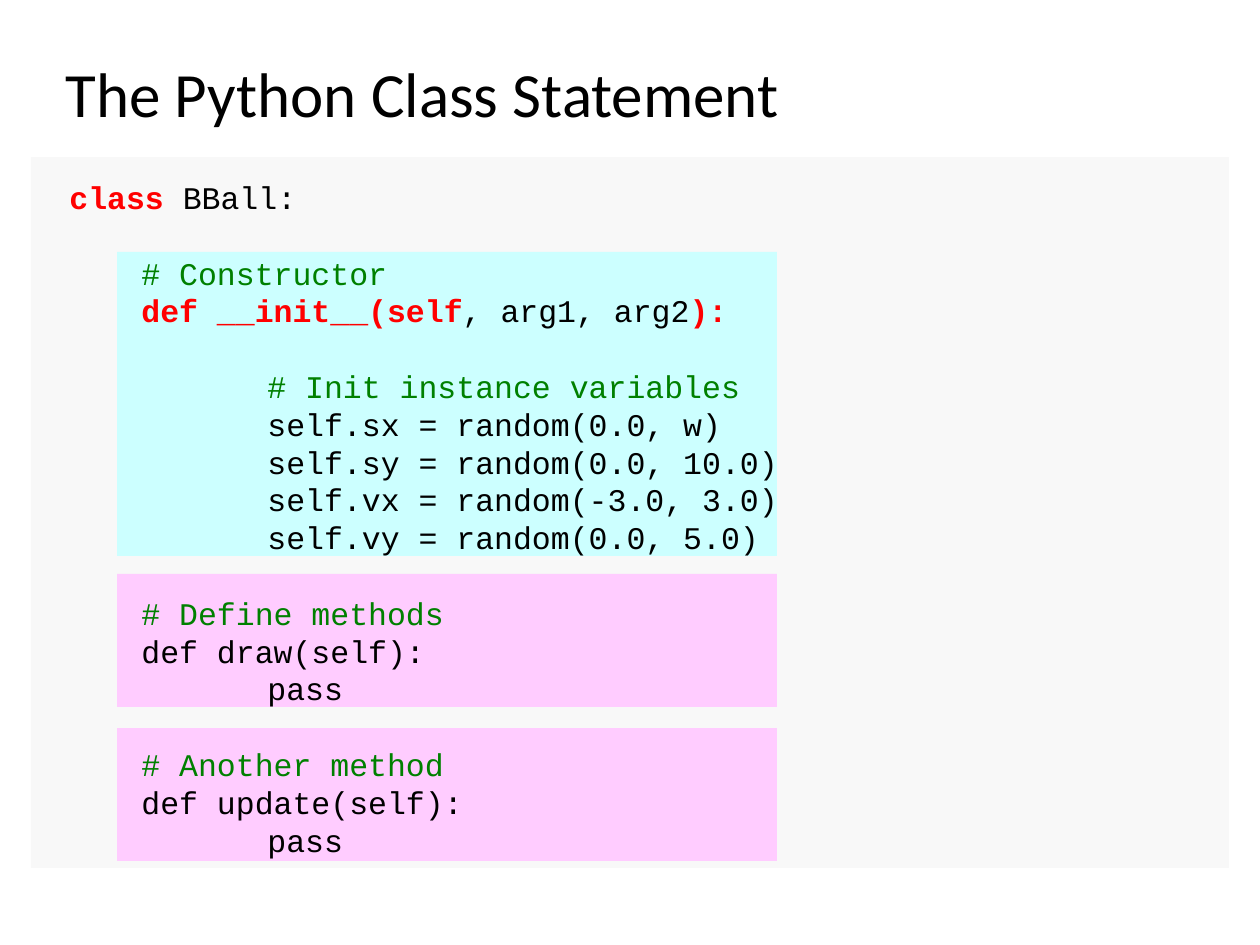
"""Build the slide that explains the Python class statement."""
from dataclasses import dataclass
from typing import NamedTuple

from pptx import Presentation
from pptx import util as u
from pptx.dml.color import RGBColor
from pptx.enum import shapes, text

PX_PER_INCH = 126


@dataclass(frozen=True)
class Theme:
    title_font: str = "Calibri"
    code_font: str = "Courier New"
    title_size: float = 36
    code_size: float = 18
    line_pitch: float = 21.6
    ink: str = "000000"
    keyword: str = "FF0000"
    comment: str = "008000"
    panel: str = "F8F8F8"
    constructor: str = "CCFFFF"
    method: str = "FFCCFF"


class Box(NamedTuple):
    left: int
    top: int
    width: int
    height: int


class Band(NamedTuple):
    box: Box
    fill: str


class Run(NamedTuple):
    text: str
    color: str
    bold: bool = False


class Line(NamedTuple):
    level: int
    runs: list[Run]
    gap: bool = False


THEME = Theme()
INDENTS = (0, 72, 198)
TITLE = Box(53, 48, 745, 89)
CODE = Box(57, 168, 1140, 738)
BANDS = [
    Band(Box(31, 157, 1198, 711), THEME.panel),
    Band(Box(117, 574, 660, 133), THEME.method),
    Band(Box(117, 728, 660, 133), THEME.method),
    Band(Box(117, 252, 660, 304), THEME.constructor),
]


def px(n: int) -> u.Emu:
    return u.Emu(round(n * u.Inches(1) / PX_PER_INCH))


def place(box: Box) -> list[u.Emu]:
    return [px(n) for n in box]


def plain(level: int, words: str) -> Line:
    return Line(level, [Run(words, THEME.ink)])


def comment(level: int, words: str) -> Line:
    return Line(level, [Run(words, THEME.comment)], gap=True)


def keyword(words: str) -> Run:
    return Run(words, THEME.keyword, True)


def method(note: str, name: str) -> list[Line]:
    return [comment(1, note), plain(1, f"def {name}(self):"), plain(2, "pass")]


LINES = [
    Line(0, [keyword("class "), Run("BBall:", THEME.ink)]),
    comment(1, "# Constructor")._replace(gap=True),
    Line(1, [keyword("def __init__(self"), Run(", arg1, arg2", THEME.ink), keyword("):")]),
    comment(2, "# Init instance variables"),
    plain(2, "self.sx = random(0.0, w)"),
    plain(2, "self.sy = random(0.0, 10.0)"),
    plain(2, "self.vx = random(-3.0, 3.0)"),
    plain(2, "self.vy = random(0.0, 5.0)"),
    *method("# Define methods", "draw"),
    *method("# Another method", "update"),
]


def style(r, font: str, size: float, color: str, bold: bool = False) -> None:
    r.font.name = font
    r.font.size = u.Pt(size)
    r.font.bold = bold
    r.font.color.rgb = RGBColor.from_string(color)


def draw_title(sp, words: str) -> None:
    sp.left, sp.top, sp.width, sp.height = place(TITLE)
    tf = sp.text_frame
    tf.text = words
    tf.word_wrap = False
    tf.auto_size = text.MSO_AUTO_SIZE.NONE
    tf.vertical_anchor = text.MSO_ANCHOR.TOP
    p = tf.paragraphs[0]
    p.alignment = text.PP_ALIGN.LEFT
    style(p.runs[0], THEME.title_font, THEME.title_size, THEME.ink)


def draw_band(group, band: Band) -> None:
    sp = group.shapes.add_shape(shapes.MSO_SHAPE.RECTANGLE, *place(band.box))
    sp.shadow.inherit = False
    sp.fill.solid()
    sp.fill.fore_color.rgb = RGBColor.from_string(band.fill)
    sp.line.fill.background()


def draw_line(p, line: Line) -> None:
    p.line_spacing = u.Pt(THEME.line_pitch)
    p.space_before = u.Pt(THEME.line_pitch if line.gap else 0)
    p._p.get_or_add_pPr().set("marL", str(px(INDENTS[line.level])))
    for run in line.runs:
        r = p.add_run()
        r.text = run.text
        style(r, THEME.code_font, THEME.code_size, run.color, run.bold)


def draw_code(group, lines: list[Line]) -> None:
    tf = group.shapes.add_textbox(*place(CODE)).text_frame
    tf.word_wrap = True
    tf.margin_top = px(10)
    for i, line in enumerate(lines):
        draw_line(tf.add_paragraph() if i else tf.paragraphs[0], line)


def main() -> None:
    prs = Presentation()
    prs.slide_width, prs.slide_height = px(1260), px(945)
    s = prs.slides.add_slide(prs.slide_layouts[5])
    draw_title(s.shapes.title, "The Python Class Statement")
    group = s.shapes.add_group_shape()
    for band in BANDS:
        draw_band(group, band)
    draw_code(group, LINES)
    prs.save("out.pptx")


if __name__ == "__main__":
    main()
